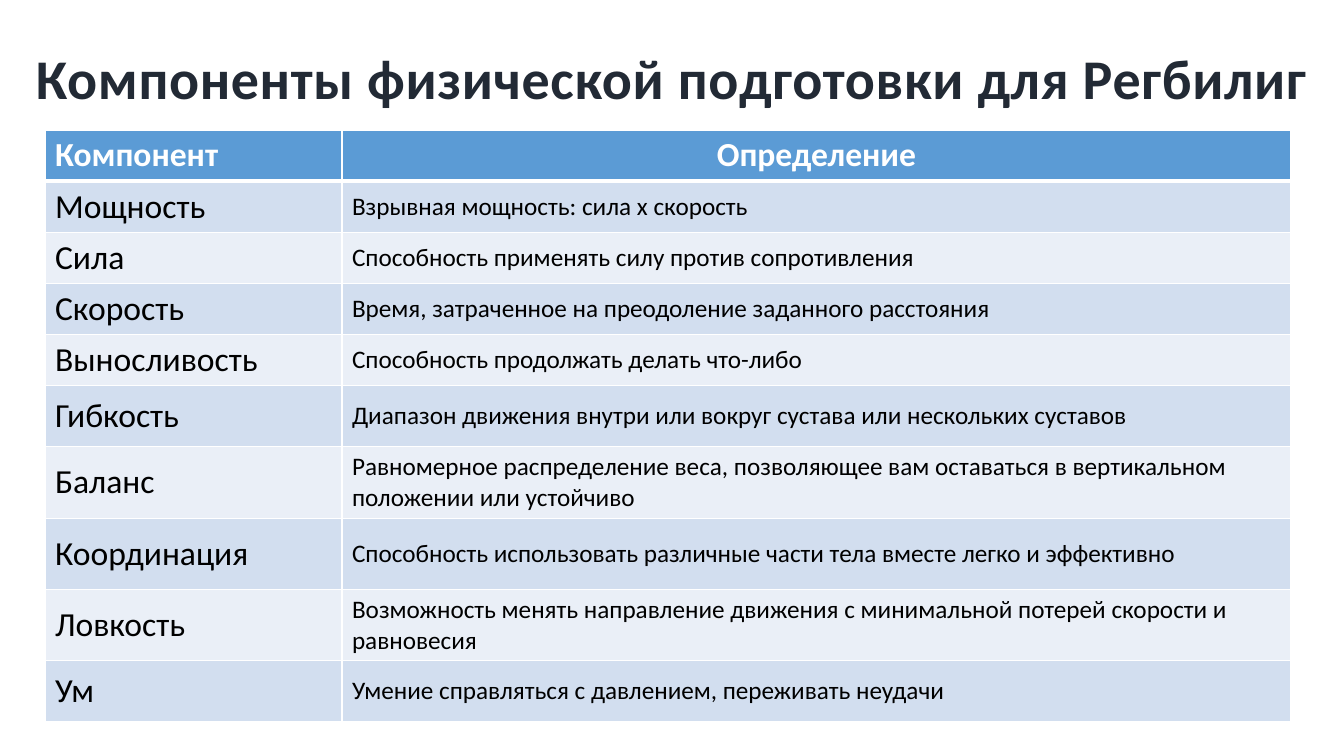
from dataclasses import dataclass

from lxml import etree
from pptx import Presentation
from pptx import util as u
from pptx.dml.color import RGBColor
from pptx.enum import text
from pptx.oxml import ns

EMU_PER_PX = 914400 / 100.8

TITLE = "Компоненты физической подготовки для Регбилиг"
HEADER = ("Компонент", "Определение")
COMPONENTS = [
    ("Мощность", "Взрывная мощность: сила х скорость"),
    ("Сила", "Способность применять силу против сопротивления"),
    ("Скорость", "Время, затраченное на преодоление заданного расстояния"),
    ("Выносливость", "Способность продолжать делать что-либо"),
    ("Гибкость", "Диапазон движения внутри или вокруг сустава или нескольких суставов"),
    ("Баланс", "Равномерное распределение веса, позволяющее вам оставаться "
               "в вертикальном положении или устойчиво"),
    ("Координация", "Способность использовать различные части тела вместе легко и эффективно"),
    ("Ловкость", "Возможность менять направление движения с минимальной потерей "
                 "скорости и равновесия"),
    ("Ум", "Умение справляться с давлением, переживать неудачи"),
]
COLUMN_WIDTHS = (297, 949)
ROW_HEIGHTS = [46] * 5 + [61] + [71] * 3 + [61]


@dataclass(frozen=True)
class Theme:
    font: str = "Calibri"
    title_color: str = "222A35"
    header_color: str = "FFFFFF"
    body_color: str = "000000"
    header_fill: str = "5B9BD5"
    band_fills: tuple = ("D2DEEF", "EAEFF7")
    border_color: str = "FFFFFF"
    title_size: int = 40
    label_size: int = 24
    definition_size: int = 18


def px(length):
    return u.Emu(round(length * EMU_PER_PX))


def apply_format(target, values):
    for name, value in values.items():
        setattr(target, name, value)


class SlideBuilder:
    def __init__(self, slide, theme):
        self.slide = slide
        self.theme = theme

    def fill_text(self, frame, content, size, color, bold=False, align=text.PP_ALIGN.LEFT):
        frame.text = content
        paragraph = frame.paragraphs[0]
        paragraph.alignment = align
        run = paragraph.runs[0]
        apply_format(run.font, {"name": self.theme.font, "size": u.Pt(size), "bold": bold})
        run.font.color.rgb = RGBColor.from_string(color)
        return run

    def title(self, content, left, top, width, height):
        shape = self.slide.shapes.title
        apply_format(shape, {"left": px(left), "top": px(top),
                             "width": px(width), "height": px(height)})
        frame = shape.text_frame
        apply_format(frame, {"word_wrap": True, "auto_size": text.MSO_AUTO_SIZE.NONE,
                             "vertical_anchor": text.MSO_ANCHOR.BOTTOM})
        run = self.fill_text(frame, content, self.theme.title_size, self.theme.title_color,
                             bold=True, align=text.PP_ALIGN.CENTER)
        frame.paragraphs[0].line_spacing = 0.9
        run._r.get_or_add_rPr().set("spc", "50")

    def borders(self, cell, widths):
        """Draw the cell's sides; widths maps L, R, T and B to points."""
        properties = cell._tc.get_or_add_tcPr()
        for side, width in widths.items():
            line = etree.SubElement(properties, ns.qn(f"a:ln{side}"), w=str(u.Pt(width)))
            fill = etree.SubElement(line, ns.qn("a:solidFill"))
            etree.SubElement(fill, ns.qn("a:srgbClr"), val=self.theme.border_color)

    def table(self, rows, left, top, column_widths, row_heights):
        theme = self.theme
        table = self.slide.shapes.add_table(
            len(rows), len(column_widths), px(left), px(top),
            px(sum(column_widths)), px(sum(row_heights))).table
        for column, width in zip(table.columns, column_widths):
            column.width = px(width)
        for row, height in zip(table.rows, row_heights):
            row.height = px(height)
        for i, row in enumerate(rows):
            is_header = i == 0
            color = theme.header_color if is_header else theme.body_color
            fill = theme.header_fill if is_header else theme.band_fills[(i - 1) % 2]
            for j, content in enumerate(row):
                cell = table.cell(i, j)
                is_label = is_header or j == 0
                size = theme.label_size if is_label else theme.definition_size
                align = text.PP_ALIGN.CENTER if is_header and j else text.PP_ALIGN.LEFT
                self.fill_text(cell.text_frame, content, size, color, is_header, align)
                cell.vertical_anchor = text.MSO_ANCHOR.MIDDLE
                self.borders(cell, {"L": 1, "R": 1, "T": 3 if i == 1 else 1,
                                    "B": 3 if is_header else 1})
                cell.fill.solid()
                cell.fill.fore_color.rgb = RGBColor.from_string(fill)


def main():
    presentation = Presentation()
    apply_format(presentation, {"slide_width": px(1344), "slide_height": px(756)})
    slide = presentation.slides.add_slide(presentation.slide_layouts[5])
    builder = SlideBuilder(slide, Theme())
    builder.title(TITLE, 0, 27, 1344, 90)
    builder.table([HEADER] + COMPONENTS, 45, 130, COLUMN_WIDTHS, ROW_HEIGHTS)
    presentation.save("out.pptx")


if __name__ == "__main__":
    main()
